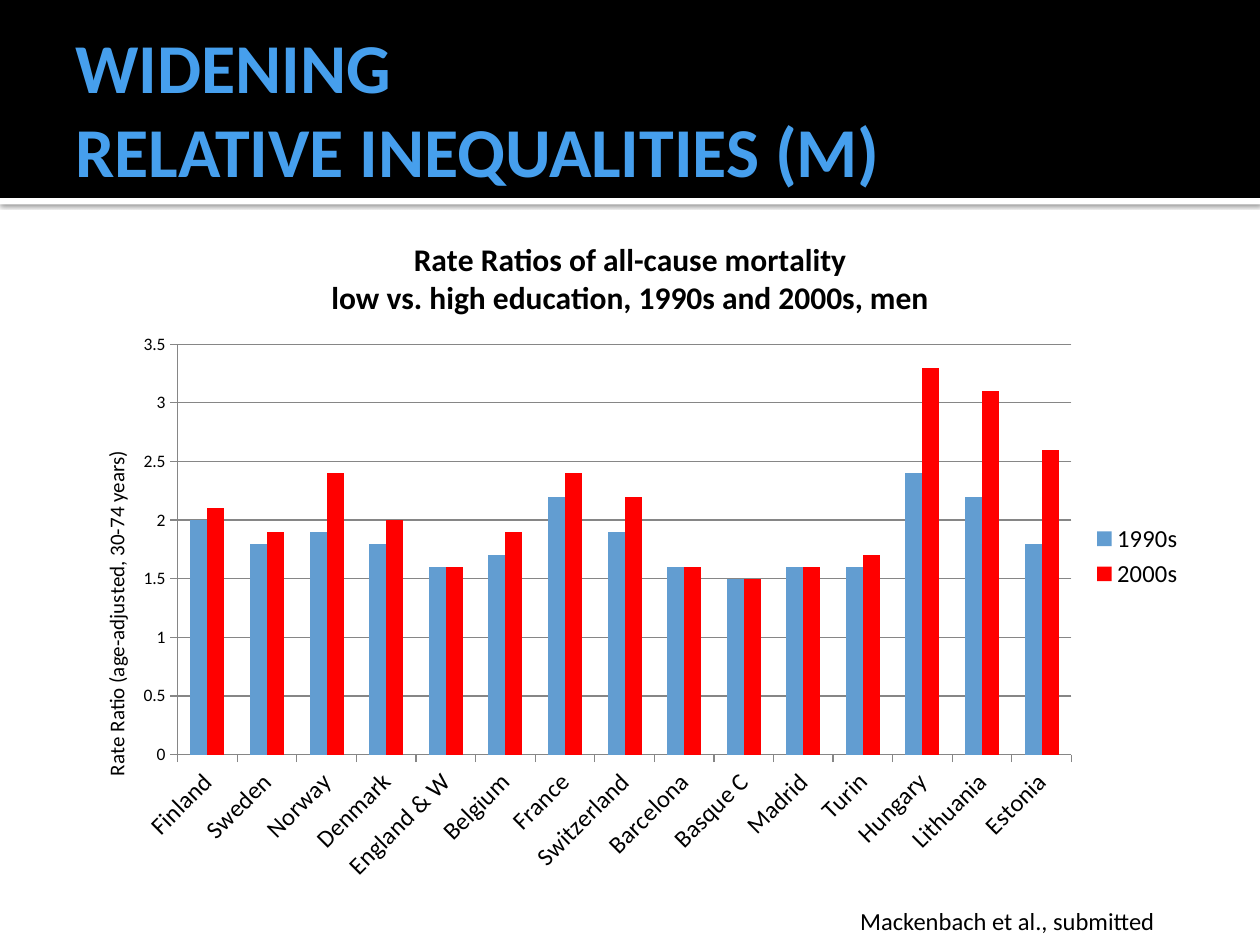
from lxml import etree
from pptx import Presentation
from pptx import util as u
from pptx.chart.data import CategoryChartData
from pptx.dml.color import RGBColor
from pptx.enum import chart as charts, shapes, text
from pptx.oxml import parse_xml
from pptx.oxml.ns import nsdecls, qn

COUNTRIES = ["Finland", "Sweden", "Norway", "Denmark", "England & W",
             "Belgium", "France", "Switzerland", "Barcelona", "Basque C",
             "Madrid", "Turin", "Hungary", "Lithuania", "Estonia"]
RATE_RATIOS = {
    "1990s": ("629DD1", [2, 1.8, 1.9, 1.8, 1.6, 1.7, 2.2, 1.9,
                         1.6, 1.5, 1.6, 1.6, 2.4, 2.2, 1.8]),
    "2000s": ("FF0000", [2.1, 1.9, 2.4, 2, 1.6, 1.9, 2.4, 2.2,
                         1.6, 1.5, 1.6, 1.7, 3.3, 3.1, 2.6]),
}


def color(hex_string):
    return RGBColor.from_string(hex_string)


def set_layout(element, position, inner=False, **fractions):
    """Place a chart part by fractions of the chart area."""
    layout = element.find(qn("c:layout"))
    if layout is None:
        layout = etree.Element(qn("c:layout"))
        element.insert(position, layout)
    manual = etree.SubElement(layout, qn("c:manualLayout"))
    settings = [("layoutTarget", "inner")] if inner else []
    settings += [("xMode", "edge"), ("yMode", "edge"), *fractions.items()]
    for tag, value in settings:
        etree.SubElement(manual, qn(f"c:{tag}")).set("val", str(value))


class SlideBuilder:
    font_name = "Calibri"
    ink = "000000"
    grid = "868686"

    def __init__(self, slide):
        self.slide = slide

    def style(self, font, size, bold=False, hex_string=ink):
        font.name, font.size, font.bold = self.font_name, u.Pt(size), bold
        font.color.rgb = color(hex_string)

    def band(self, top, height, fill, shadow=False):
        shape = self.slide.shapes.add_shape(
            shapes.MSO_SHAPE.RECTANGLE, 0, u.Cm(top), u.Cm(25.4), u.Cm(height))
        shape.fill.solid()
        shape.fill.fore_color.rgb = color(fill)
        shape.line.fill.background()
        shape.shadow.inherit = False
        if shadow:
            effects = shape._element.spPr.find(qn("a:effectLst"))
            effects.append(parse_xml(
                f'<a:outerShdw {nsdecls("a")} blurRad="31750" dist="10160" '
                'dir="5400000" algn="tl" rotWithShape="0"><a:srgbClr '
                'val="000000"><a:alpha val="60000"/></a:srgbClr></a:outerShdw>'))

    def text(self, content, left, top, width, height, size, bold=False,
             hex_string=ink, anchor=text.MSO_ANCHOR.TOP):
        box = self.slide.shapes.add_textbox(
            u.Cm(left), u.Cm(top), u.Cm(width), u.Cm(height))
        frame = box.text_frame
        frame.word_wrap = True
        frame.vertical_anchor = anchor
        paragraph = frame.paragraphs[0]
        paragraph.text = content
        self.style(paragraph.font, size, bold, hex_string)

    def title(self, part, lines, size, bold=False):
        part.text_frame.text = "\n".join(lines)
        for paragraph in part.text_frame.paragraphs:
            self.style(paragraph.font, size, bold)

    def column_chart(self, left, top, width, height):
        data = CategoryChartData()
        data.categories = COUNTRIES
        for name, (_, values) in RATE_RATIOS.items():
            data.add_series(name, values)
        chart = self.slide.shapes.add_chart(
            charts.XL_CHART_TYPE.COLUMN_CLUSTERED, u.Cm(left), u.Cm(top),
            u.Cm(width), u.Cm(height), data).chart
        self.style(chart.font, 10)
        self.title(chart.chart_title, ["Rate Ratios of all-cause mortality",
                   "low vs. high education, 1990s and 2000s, men"], 18, True)
        chart.chart_title.include_in_layout = False

        # Columns
        plot = chart.plots[0]
        plot.gap_width, plot.overlap = 150, 0
        plot.vary_by_categories = False
        for series in plot.series:
            series.format.fill.solid()
            series.format.fill.fore_color.rgb = color(RATE_RATIOS[series.name][0])

        # Axes
        category, value = chart.category_axis, chart.value_axis
        value.minimum_scale, value.maximum_scale, value.major_unit = 0, 3.5, 0.5
        value.has_major_gridlines = True
        for axis, size in ((category, 14), (value, 10)):
            axis.major_tick_mark = charts.XL_TICK_MARK.OUTSIDE
            self.style(axis.tick_labels.font, size)
        for line in (category.format.line, value.format.line,
                     value.major_gridlines.format.line):
            line.color.rgb = color(self.grid)
            line.width = u.Pt(0.75)
        labels = category._element.find(qn("c:txPr")).find(qn("a:bodyPr"))
        labels.set("rot", "-2700000")
        labels.set("vert", "horz")
        self.title(value.axis_title,
                   ["Rate Ratio (age-adjusted, 30-74 years)"], 12)
        heading = value.axis_title.text_frame._txBody.bodyPr
        heading.set("rot", "-5400000")
        heading.set("vert", "horz")

        # Legend and placement
        chart.has_legend = True
        chart.legend.position = charts.XL_LEGEND_POSITION.RIGHT
        chart.legend.include_in_layout = False
        self.style(chart.legend.font, 14)
        plot_area = chart._chartSpace.chart.plotArea
        set_layout(plot_area, 0, True, x=0.1, y=0.19, w=0.79, h=0.6)
        set_layout(value.axis_title._element, 1, x=0.03, y=0.34)


def main():
    presentation = Presentation()
    presentation.slide_width, presentation.slide_height = u.Cm(25.4), u.Cm(19.05)
    builder = SlideBuilder(
        presentation.slides.add_slide(presentation.slide_layouts[6]))

    # Header
    builder.band(3.99, 0.13, "FFFFFF", shadow=True)
    builder.band(0, 3.99, "000000")

    # Chart
    builder.column_chart(1.3, 4.32, 22.81, 13.79)

    # Title and source
    builder.text("WIDENING \vRELATIVE INEQUALITIES (M)", 1.27, 0.43, 22.83, 3.48,
                 40, True, "469FED", text.MSO_ANCHOR.MIDDLE)
    builder.text("Mackenbach et al., submitted", 17.09, 18.14, 7.59, 0.86, 14)
    presentation.save("out.pptx")


if __name__ == "__main__":
    main()
